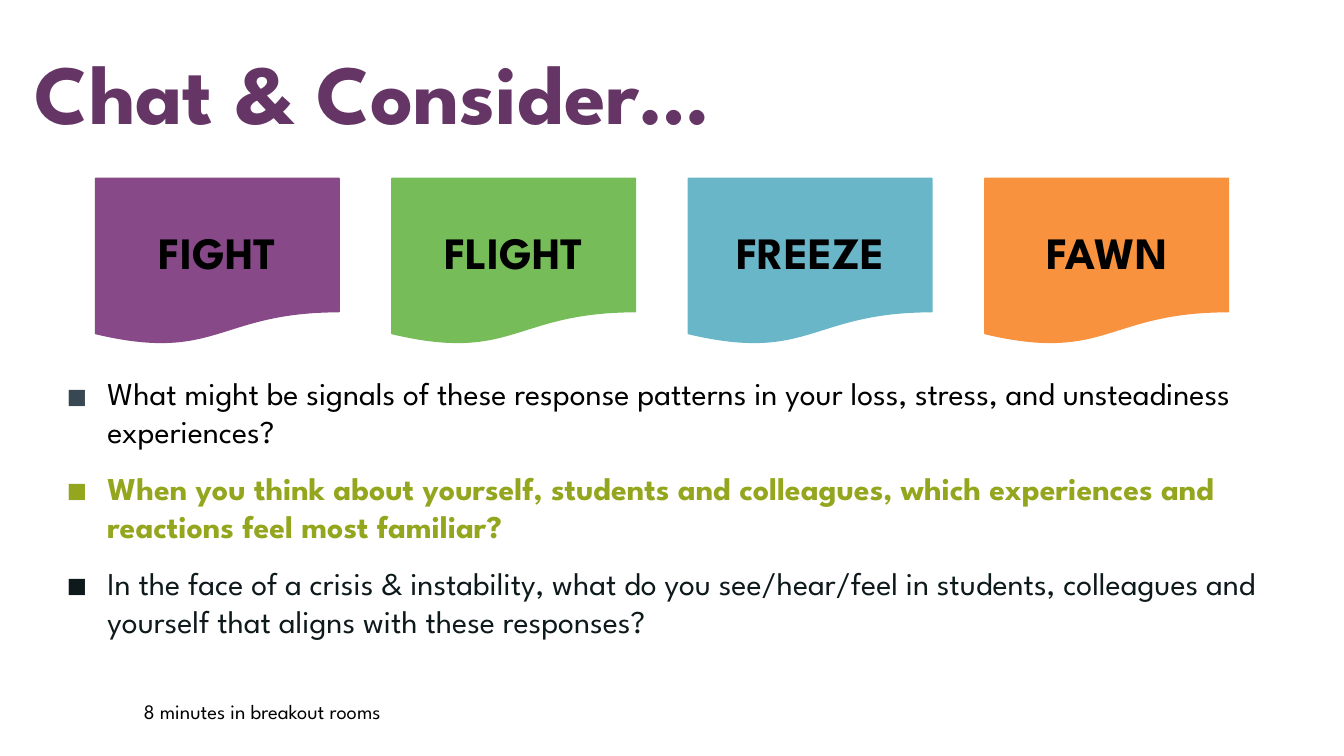
from lxml import etree
from pptx import Presentation
from pptx.dml.color import RGBColor
from pptx.enum.shapes import MSO_SHAPE
from pptx.enum.text import MSO_ANCHOR, MSO_AUTO_SIZE, PP_ALIGN
from pptx.oxml.ns import qn
from pptx.util import Pt

DOCUMENT = MSO_SHAPE.FLOWCHART_DOCUMENT
TOP, BOTTOM = MSO_ANCHOR.TOP, MSO_ANCHOR.BOTTOM
NO_AUTOFIT = MSO_AUTO_SIZE.NONE
LEFT, CENTER = PP_ALIGN.LEFT, PP_ALIGN.CENTER

FONT = "League Spartan"
BLACK = RGBColor(0x00, 0x00, 0x00)
PLUM = RGBColor(0x65, 0x36, 0x65)
PURPLE = RGBColor(0x87, 0x49, 0x87)
GREEN = RGBColor(0x76, 0xBD, 0x59)
BLUE = RGBColor(0x69, 0xB6, 0xC9)
ORANGE = RGBColor(0xF9, 0x92, 0x3E)
SLATE = RGBColor(0x38, 0x48, 0x52)
OLIVE = RGBColor(0x93, 0xA6, 0x1E)
INK = RGBColor(0x0E, 0x19, 0x1B)


def write(frame, text, size, color=BLACK, bold=False, align=LEFT,
          anchor=TOP, inset_x=7.2, inset_y=7.2):
    """Fill the frame's last paragraph and return it."""
    frame.word_wrap = True
    frame.auto_size = NO_AUTOFIT
    frame.vertical_anchor = anchor
    frame.margin_left = frame.margin_right = Pt(inset_x)
    frame.margin_top = frame.margin_bottom = Pt(inset_y)
    paragraph = frame.paragraphs[-1]
    paragraph.alignment = align
    run = paragraph.add_run()
    run.text = text
    run.font.name = FONT
    run.font.size = Pt(size)
    run.font.bold = bold
    run.font.color.rgb = color
    return paragraph


def add_square_bullet(paragraph, color):
    properties = paragraph._p.get_or_add_pPr()
    properties.set("marL", str(Pt(27.4)))
    properties.set("indent", str(Pt(-21.6)))
    bullet_color = etree.SubElement(properties, qn("a:buClr"))
    etree.SubElement(bullet_color, qn("a:srgbClr"), val=str(color))
    etree.SubElement(properties, qn("a:buFont"), typeface="Noto Sans Symbols")
    etree.SubElement(properties, qn("a:buChar"), char="◼")


prs = Presentation()
prs.slide_width, prs.slide_height = Pt(720), Pt(405)
slide = prs.slides.add_slide(prs.slide_layouts[5])

# Title
title = slide.shapes.title
title.left, title.top = Pt(18.7), Pt(-26.6)
title.width, title.height = Pt(620.6), Pt(105.8)
write(title.text_frame, "Chat & Consider…", 45, PLUM, bold=True,
      anchor=BOTTOM, inset_x=0, inset_y=3.6)

# Four response patterns
responses = [("FIGHT", PURPLE), ("FLIGHT", GREEN), ("FREEZE", BLUE), ("FAWN", ORANGE)]
card_width, card_pitch, label_width = 130.5, 158.8, 101.5
for index, (response, color) in enumerate(responses):
    card_left = 51.2 + index * card_pitch
    card = slide.shapes.add_shape(DOCUMENT, Pt(card_left), Pt(95.6), Pt(card_width), Pt(89))
    card.shadow.inherit = False
    card.fill.solid()
    card.fill.fore_color.rgb = color
    card.line.color.rgb = color
    card.line.width = Pt(0.75)
    label_left = card_left + (card_width - label_width) / 2
    label = slide.shapes.add_textbox(Pt(label_left), Pt(113), Pt(label_width), Pt(44))
    write(label.text_frame, response, 24, bold=True, align=CENTER)

# Discussion questions: text, text colour, bullet colour, bold
questions = [
    ("What might be signals of these response patterns in your loss, stress, "
     "and unsteadiness experiences?", BLACK, SLATE, False),
    ("When you think about yourself, students and colleagues, which experiences "
     "and reactions feel most familiar?", OLIVE, OLIVE, True),
    ("In the face of a crisis & instability, what do you see/hear/feel in students, "
     "colleagues and yourself that aligns with these responses?", INK, INK, False),
]
discussion = slide.shapes.add_textbox(Pt(30.2), Pt(196.6), Pt(660.2), Pt(160)).text_frame
for index, (question, color, bullet_color, bold) in enumerate(questions):
    if index:
        discussion.add_paragraph()
    paragraph = write(discussion, question, 17, color, bold, inset_x=0, inset_y=3.6)
    paragraph.space_before = Pt(10 if index else 0)
    add_square_bullet(paragraph, bullet_color)

# Time allowed
timing = slide.shapes.add_textbox(Pt(69.8), Pt(367.2), Pt(453), Pt(28))
write(timing.text_frame, "8 minutes in breakout rooms", 11)

prs.save("out.pptx")
